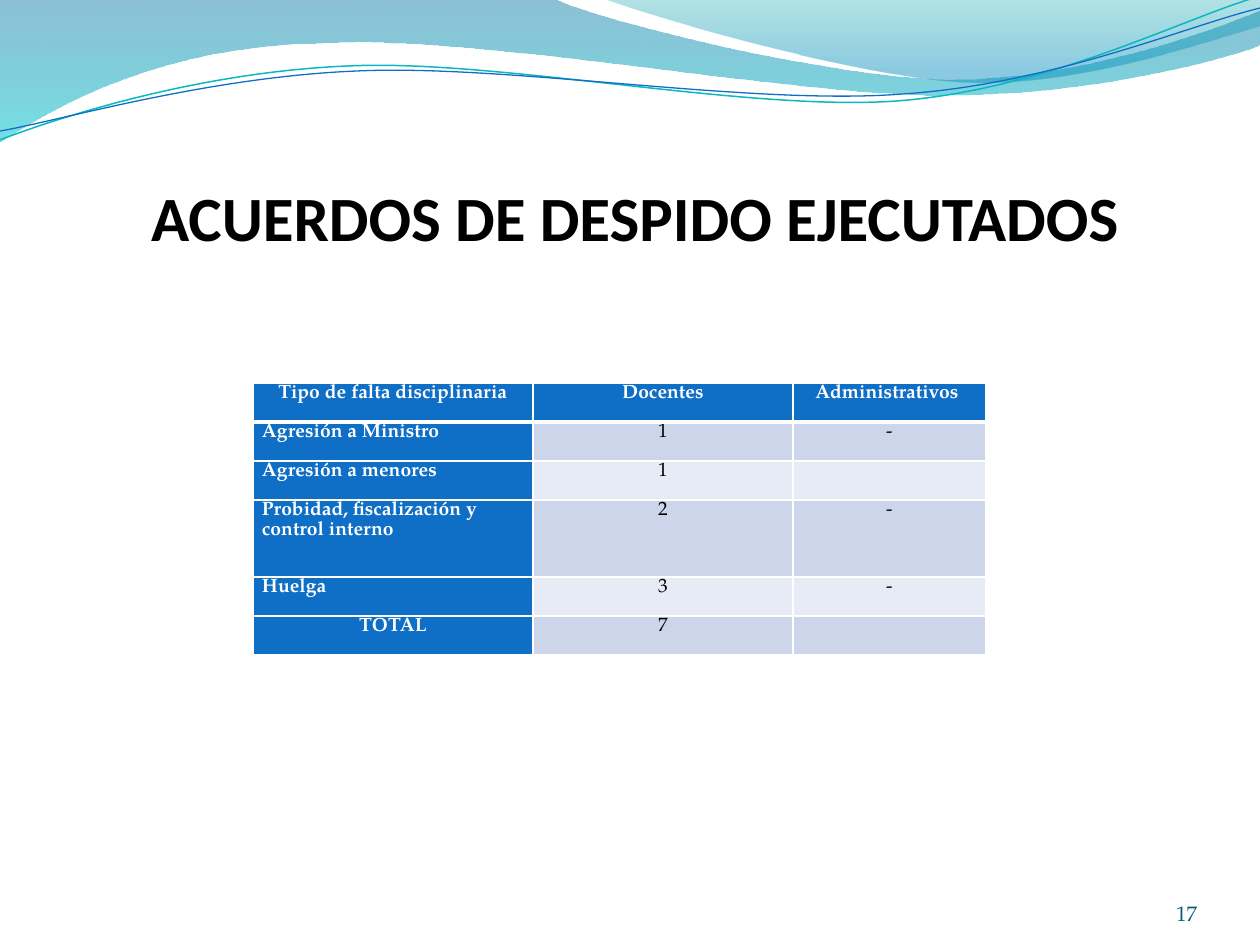
"""Build the slide on executed dismissal agreements, with its wave header and table."""
from dataclasses import dataclass
from math import cos, radians, sin

from lxml.etree import SubElement
from pptx import Presentation
from pptx.dml.color import RGBColor as RGB
from pptx.enum.text import MSO_ANCHOR as Anchor, PP_ALIGN as Align
from pptx.oxml.ns import qn
from pptx.util import Emu, Pt

TITLE = "ACUERDOS DE DESPIDO EJECUTADOS"
PAGE_NUMBER = "17"
ROWS = [
    ("Tipo de falta disciplinaria", "Docentes", "Administrativos "),
    ("Agresión a Ministro", "1", "-"),
    ("Agresión a menores", "1", ""),
    ("Probidad, fiscalización y control interno", "2", "-"),
    ("Huelga", "3", "-"),
    ("TOTAL", "7", ""),
]
COLUMN_WIDTHS = [280, 260, 193]
ROW_HEIGHTS = [39, 39, 39, 77, 39, 39]
TABLE_LEFT, TABLE_TOP = 253, 383
CELL_INSET = 9
TITLE_BOX = (63, 97, 1144, 157)
NUMBER_BOX = (1092, 876, 105, 50)

BANDS = [
    ([("0074A1", 45), ("00C6CF", 55)], (0, 0), [
        [(554, -1)],
        [(600, 21), (837, 79), (955, 79)],
        [(1075, 79), (1207, 33), (1260, 11)],
        [(1261, 45)],
        [(1239, 55), (1096, 96), (940, 95)],
        [(784, 95), (481, 35), (324, 43)],
        [(163, 45), (58, 105), (-1, 142)],
    ]),
    ([("00A1A9", 30), ("008BBF", 45)], (604, -1), [
        [(641, 14), (859, 78), (969, 82)],
        [(1079, 86), (1211, 40), (1260, 26)],
        [(1260, 0)],
    ]),
]
STRAND_TILT = -2.7
STRANDS = [
    ("0AB8BF", 0.85, (629, 72), (0, 140), [
        [(60, 117), (199, 72), (349, 66)],
        [(498, 59), (747, 112), (898, 101)],
        [(1049, 89), (1182, 19), (1257, -3)],
    ]),
    ("0F6FC6", 0.75, (629, 74), (0, 131), [
        [(59, 121), (207, 77), (357, 71)],
        [(508, 64), (752, 106), (903, 94)],
        [(1053, 84), (1186, 26), (1260, 8)],
    ]),
]


@dataclass(frozen=True)
class Theme:
    heading_font: str = "Calibri"
    body_font: str = "TeX Gyre Pagella"
    ink: str = "000000"
    white: str = "FFFFFF"
    header: str = "0F6FC6"
    bands: tuple = ("CCD5EA", "E7EBF5")
    number: str = "045D75"
    title_size: int = 36
    number_size: int = 12
    table_size: int = 11


THEME = Theme()
SCALE = 914400 / 126


def px(length):
    return Emu(round(length * SCALE))


def place(part, box):
    part.left, part.top, part.width, part.height = map(px, box)


def style(paragraph, face, size, color, bold, align):
    font = paragraph.font
    font.name, font.size, font.bold = face, Pt(size), bold
    font.color.rgb = RGB.from_string(color)
    paragraph.alignment = align


def set_frame(frame, top_inset=0):
    frame.word_wrap = True
    frame.vertical_anchor = Anchor.BOTTOM
    frame.margin_left = frame.margin_right = frame.margin_bottom = 0
    frame.margin_top = px(top_inset)


def level(point, pivot):
    angle = radians(-STRAND_TILT)
    dx, dy = point[0] - pivot[0], point[1] - pivot[1]
    return (pivot[0] + dx * cos(angle) - dy * sin(angle),
            pivot[1] + dx * sin(angle) + dy * cos(angle))


def add_wave(slide, start, segments, close):
    points = [(px(x), px(y)) for segment in segments for x, y in segment]
    builder = slide.shapes.build_freeform(px(start[0]), px(start[1]), scale=1.0)
    builder.add_line_segments(points, close=close)
    wave = builder.convert_to_shape()
    wave.shadow.inherit = False
    steps = iter(list(wave.element.iter(qn("a:lnTo"))))
    for segment in segments:
        curve, *others = [next(steps) for _ in segment]
        if others:
            curve.tag = qn("a:cubicBezTo")
        for other in others:
            curve.append(other[0])
            other.getparent().remove(other)
    return wave


def add_header(slide):
    for stops, start, segments in BANDS:
        band = add_wave(slide, start, segments, True)
        band.line.fill.background()
        band.fill.gradient()
        band.fill.gradient_angle = 270
        for stop, (color, _) in zip(band.fill.gradient_stops, stops):
            stop.color.rgb = RGB.from_string(color)
        if start != BANDS[0][1]:
            band.element.findall(".//" + qn("a:gs"))[1].set("pos", "80000")
        for tint, (_, opacity) in zip(band.element.iter(qn("a:srgbClr")), stops):
            SubElement(tint, qn("a:alpha"), val=str(opacity * 1000))
    for color, width, pivot, start, segments in STRANDS:
        leveled = [[level(point, pivot) for point in segment] for segment in segments]
        strand = add_wave(slide, level(start, pivot), leveled, False)
        strand.rotation = STRAND_TILT
        strand.fill.background()
        strand.line.color.rgb = RGB.from_string(color)
        strand.line.width = Pt(width)


def add_borders(cell, widths):
    properties = cell._tc.get_or_add_tcPr()
    for side, width in widths.items():
        border = SubElement(properties, qn(f"a:ln{side}"), w=str(Pt(width)))
        fill = SubElement(border, qn("a:solidFill"))
        SubElement(fill, qn("a:srgbClr"), val=THEME.white)


def add_faults_table(slide):
    faults = slide.shapes.add_table(
        len(ROWS), len(COLUMN_WIDTHS), px(TABLE_LEFT), px(TABLE_TOP),
        px(sum(COLUMN_WIDTHS)), px(sum(ROW_HEIGHTS))).table
    for column, width in zip(faults.columns, COLUMN_WIDTHS):
        column.width = px(width)
    for r, (row, height, texts) in enumerate(zip(faults.rows, ROW_HEIGHTS, ROWS)):
        row.height = px(height)
        for c, (cell, text) in enumerate(zip(row.cells, texts)):
            heading = r == 0 or c == 0
            left_aligned = c == 0 and 0 < r < len(ROWS) - 1
            cell.margin_left = cell.margin_right = px(CELL_INSET)
            cell.margin_top = cell.margin_bottom = 0
            add_borders(cell, {"L": 1, "R": 1, "T": 3 if r == 1 else 1,
                               "B": 3 if r == 0 else 1})
            cell.fill.solid()
            cell.fill.fore_color.rgb = RGB.from_string(
                THEME.header if heading else THEME.bands[(r - 1) % 2])
            cell.text = text
            entry = cell.text_frame.paragraphs[0]
            entry.line_spacing = 1.07
            style(entry, THEME.body_font, THEME.table_size,
                  THEME.white if heading else THEME.ink, heading,
                  Align.LEFT if left_aligned else Align.CENTER)


def main():
    deck = Presentation()
    deck.slide_width, deck.slide_height = px(1260), px(945)
    slide = deck.slides.add_slide(deck.slide_layouts[5])
    add_header(slide)

    title = slide.shapes.title
    place(title, TITLE_BOX)
    set_frame(title.text_frame, 6)
    title.text_frame.text = TITLE
    style(title.text_frame.paragraphs[0], THEME.heading_font, THEME.title_size,
          THEME.ink, True, Align.CENTER)

    number = slide.shapes.add_textbox(*map(px, NUMBER_BOX))
    set_frame(number.text_frame)
    number.text_frame.text = PAGE_NUMBER
    style(number.text_frame.paragraphs[0], THEME.body_font, THEME.number_size,
          THEME.number, False, Align.RIGHT)

    add_faults_table(slide)
    deck.save("out.pptx")


if __name__ == "__main__":
    main()
